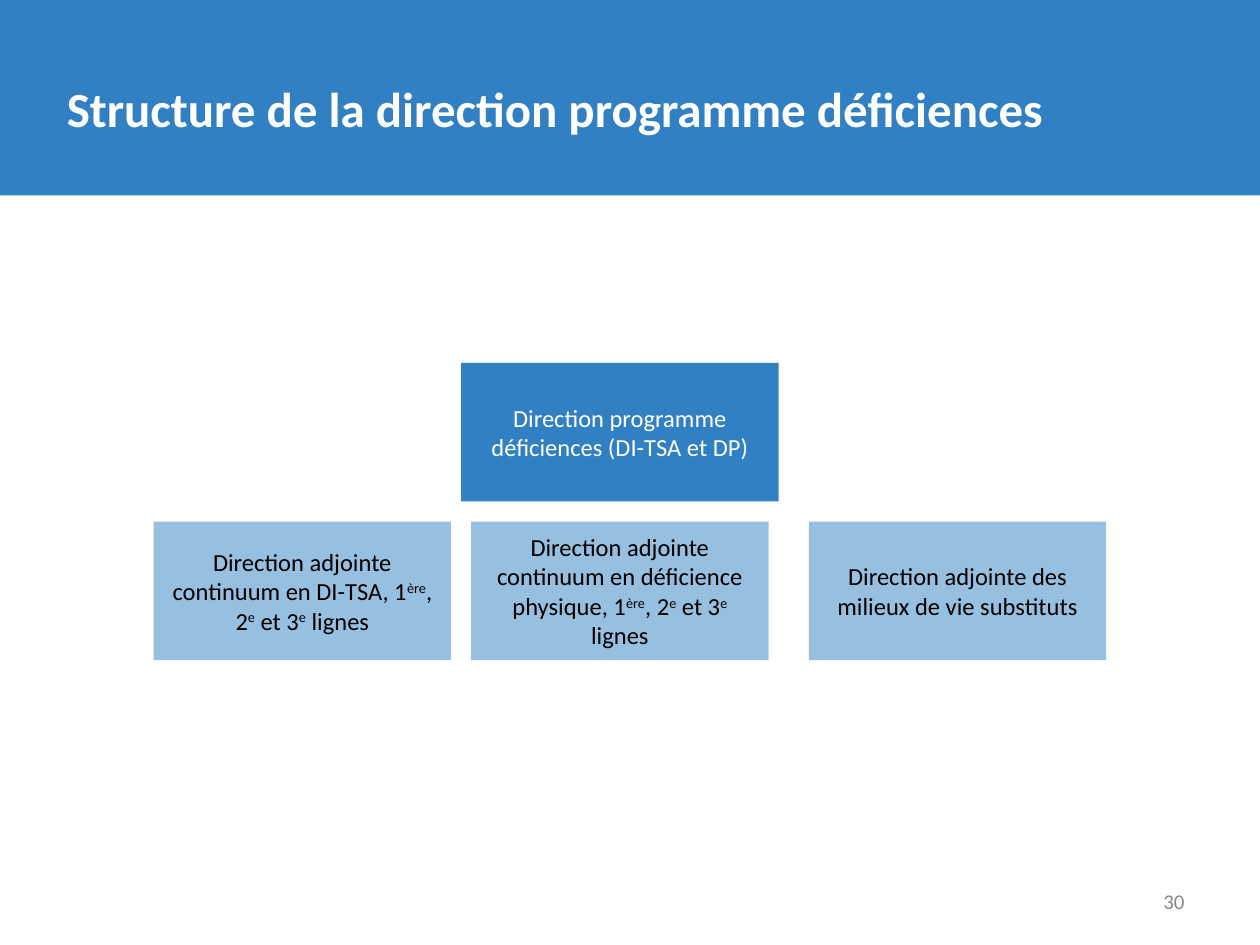
from dataclasses import dataclass

from lxml import etree
from pptx import Presentation
from pptx.dml.color import RGBColor
from pptx.enum.shapes import MSO_SHAPE
from pptx.enum.text import MSO_ANCHOR, MSO_AUTO_SIZE, PP_ALIGN
from pptx.oxml.ns import qn
from pptx.util import Emu, Inches, Pt

RECTANGLE = MSO_SHAPE.RECTANGLE
MIDDLE = MSO_ANCHOR.MIDDLE
NO_FIT = MSO_AUTO_SIZE.NONE
LEFT, CENTER, RIGHT = PP_ALIGN.LEFT, PP_ALIGN.CENTER, PP_ALIGN.RIGHT

SLIDE_WIDTH, SLIDE_HEIGHT = Inches(10), Inches(7.5)
COLUMNS, ROWS = 100, 75
TITLE_ONLY = 5


@dataclass(frozen=True)
class Theme:
    font: str = "Calibri"
    blue: str = "3080C3"
    white: str = "FFFFFF"
    black: str = "000000"
    grey: str = "898989"
    title_size: int = 28
    title_leading: int = 44
    box_size: int = 14
    number_size: int = 12
    superscript: int = 30
    tint: int = 50


@dataclass(frozen=True)
class Area:
    column: float
    row: float
    columns: float
    rows: float

    def place(self, shape) -> None:
        shape.left, shape.top, shape.width, shape.height = self.lengths()

    def lengths(self) -> tuple:
        across, down = SLIDE_WIDTH / COLUMNS, SLIDE_HEIGHT / ROWS
        return (Emu(round(self.column * across)), Emu(round(self.row * down)),
                Emu(round(self.columns * across)), Emu(round(self.rows * down)))


@dataclass(frozen=True)
class Span:
    text: str
    raised: bool = False


@dataclass(frozen=True)
class Style:
    size: int
    color: str
    align: PP_ALIGN
    bold: bool = False


@dataclass(frozen=True)
class Unit:
    area: Area
    spans: tuple
    color: str
    opacity: int = 100


THEME = Theme()
BOX_WIDTH, BOX_HEIGHT, ROOT_WIDTH = 23.6, 11, 25.2
ROOT_ROW, ROW_GAP = 28.8, 1.6
DEPUTY_ROW = ROOT_ROW + BOX_HEIGHT + ROW_GAP
DEPUTY_COLUMNS = (12.2, 37.4, 64.2)
ROOT_COLUMN = DEPUTY_COLUMNS[1] - (ROOT_WIDTH - BOX_WIDTH) / 2
SERVICE_LINES = (Span("ère", True), Span(", 2"), Span("e", True),
                 Span(" et 3"), Span("e", True), Span(" lignes"))
DEPUTIES = (
    (Span("Direction adjointe continuum en DI-TSA, 1"), *SERVICE_LINES),
    (Span("Direction adjointe continuum en déficience physique, 1"), *SERVICE_LINES),
    (Span("Direction adjointe des milieux de vie substituts"),),
)


def write(shape, spans: tuple, style: Style):
    frame = shape.text_frame
    frame.word_wrap = True
    frame.auto_size = NO_FIT
    frame.vertical_anchor = MIDDLE
    para = frame.paragraphs[0]
    para.alignment = style.align
    for span in spans:
        run = para.add_run()
        run.text = span.text
        run.font.name = THEME.font
        run.font.size = Pt(style.size)
        run.font.bold = style.bold
        run.font.color.rgb = RGBColor.from_string(style.color)
        if span.raised:
            run.font._element.set("baseline", str(THEME.superscript * 1000))
    return para


def add_rectangle(page, area: Area, opacity: int = 100):
    shape = page.shapes.add_shape(RECTANGLE, *area.lengths())
    shape.shadow.inherit = False
    shape.line.fill.background()
    shape.fill.solid()
    shape.fill.fore_color.rgb = RGBColor.from_string(THEME.blue)
    if opacity < 100:
        color = shape._element.spPr.find(qn("a:solidFill")).find(qn("a:srgbClr"))
        etree.SubElement(color, qn("a:alpha")).set("val", str(opacity * 1000))
    return shape


def add_unit(page, unit: Unit) -> None:
    shape = add_rectangle(page, unit.area, unit.opacity)
    write(shape, unit.spans, Style(THEME.box_size, unit.color, CENTER))


def add_heading(page, text: str) -> None:
    band = add_rectangle(page, Area(0, 0, COLUMNS, 15.5))
    title = page.shapes.title
    band._element.addnext(title._element)
    Area(4.3, 4.3, 82.7, 7.1).place(title)
    para = write(title, (Span(text),),
                 Style(THEME.title_size, THEME.white, LEFT, bold=True))
    para.line_spacing = Pt(THEME.title_leading)
    para.space_before = Pt(0)


def add_page_number(page, number: str) -> None:
    box = page.shapes.add_textbox(*Area(71.7, 69.5, 23.3, 4).lengths())
    write(box, (Span(number),), Style(THEME.number_size, THEME.grey, RIGHT))


def main() -> None:
    deck = Presentation()
    deck.slide_width, deck.slide_height = SLIDE_WIDTH, SLIDE_HEIGHT
    page = deck.slides.add_slide(deck.slide_layouts[TITLE_ONLY])
    add_heading(page, "Structure de la direction programme déficiences")
    add_unit(page, Unit(Area(ROOT_COLUMN, ROOT_ROW, ROOT_WIDTH, BOX_HEIGHT),
                        (Span("Direction programme déficiences (DI-TSA et DP)"),),
                        THEME.white))
    for column, spans in zip(DEPUTY_COLUMNS, DEPUTIES):
        add_unit(page, Unit(Area(column, DEPUTY_ROW, BOX_WIDTH, BOX_HEIGHT),
                            spans, THEME.black, THEME.tint))
    add_page_number(page, "30")
    deck.save("out.pptx")


if __name__ == "__main__":
    main()
